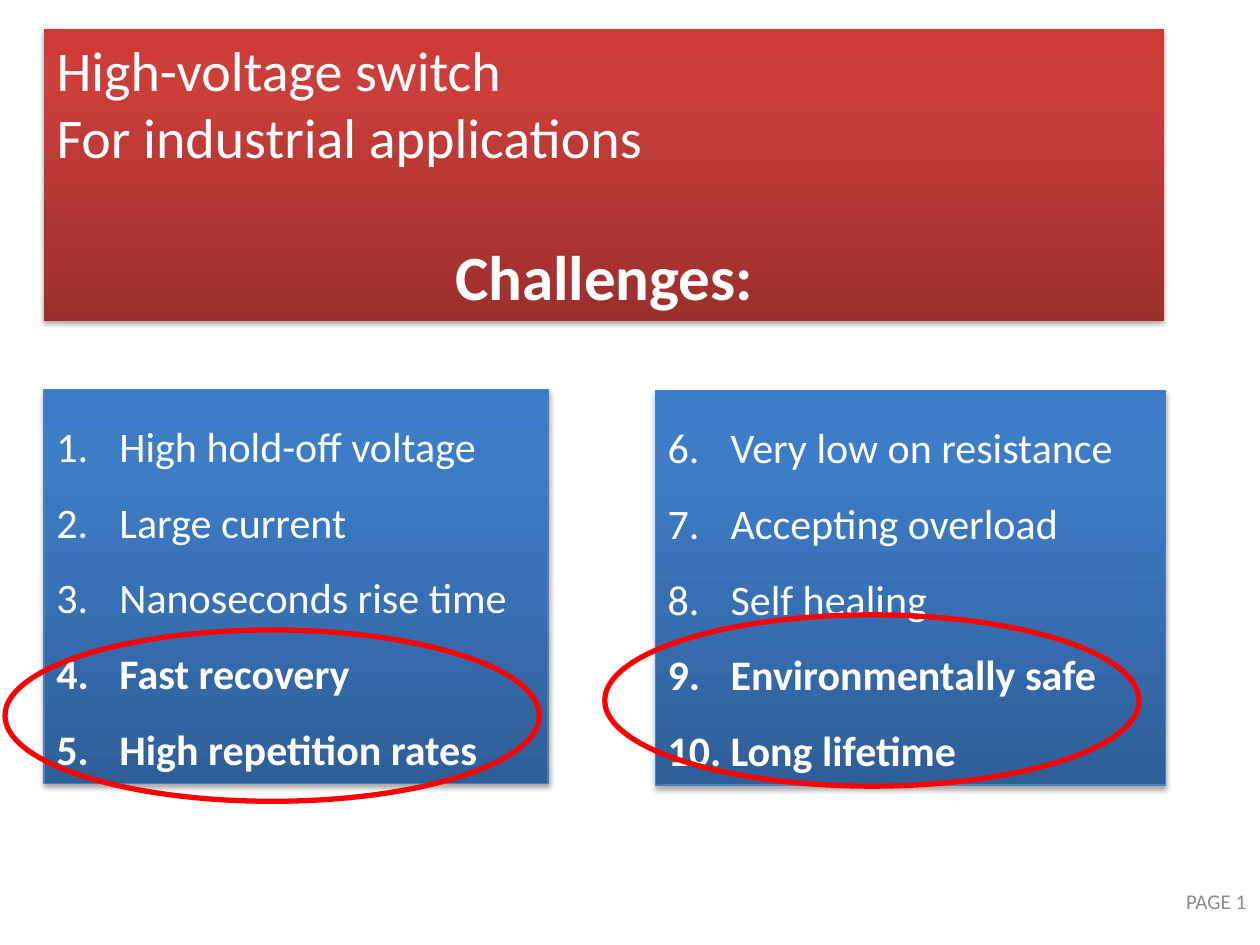
from lxml.etree import SubElement as Sub
from pptx import Presentation
from pptx.dml.color import RGBColor as Rgb
from pptx.enum.shapes import MSO_SHAPE as Kind
from pptx.enum.text import MSO_ANCHOR as Anchor, MSO_AUTO_SIZE as Auto, PP_ALIGN as Align
from pptx.oxml.ns import qn
from pptx.util import Inches, Pt

HUES = {
    "white": "FFFFFF", "gray": "8C8C8C", "ring": "FF0000", "edge": "4B7EBC", "shade": "000000",
}
FADES = {
    "red": ("9C2F2D", "CB3E3A", "CE3B37"),
    "blue": ("2F5F99", "3D7CC7", "3A7CCB"),
}
STOPS = (0, 80, 100)


def hue(name):
    """Return the named colour."""
    return Rgb.from_string(HUES[name])


def style(para, size, name="white", bold=False):
    """Format every run of a paragraph."""
    for run in para.runs:
        font = run.font
        font.name, font.size, font.bold = "Calibri", Pt(size), bold
        font.color.rgb = hue(name)


def write(frame, lines):
    """Put one line in each paragraph, aligned left."""
    frame.text = "\n".join(lines)
    for para in frame.paragraphs:
        para.alignment = Align.LEFT
    return frame.paragraphs


def add_panel(slide, box, fade):
    """Add a rectangle with a vertical gradient and a soft shadow."""
    panel = slide.shapes.add_shape(Kind.RECTANGLE, *map(Inches, box))
    panel.fill.gradient()
    panel.fill.gradient_angle = 90
    props = panel._element.spPr
    stops = props.find(qn("a:gradFill")).find(qn("a:gsLst"))
    for stop in list(stops):
        stops.remove(stop)
    for place, tone in zip(STOPS, FADES[fade]):
        stop = Sub(stops, qn("a:gs"), pos=str(place * 1000))
        Sub(stop, qn("a:srgbClr"), val=tone)
    panel.line.fill.background()
    panel.shadow.inherit = False
    cast = Sub(props.find(qn("a:effectLst")), qn("a:outerShdw"), blurRad=str(Pt(3.1)),
               dist=str(Pt(1.8)), dir="5400000", rotWithShape="0")
    tone = Sub(cast, qn("a:srgbClr"), val=HUES["shade"])
    Sub(tone, qn("a:alpha"), val="35000")
    frame = panel.text_frame
    frame.word_wrap = True
    frame.vertical_anchor = Anchor.TOP
    frame.auto_size = Auto.SHAPE_TO_FIT_TEXT
    return panel


def add_title(slide, box, lines, head):
    """Add the red banner with its lines and a centred heading."""
    panel = add_panel(slide, box, "red")
    *paras, last = write(panel.text_frame, [*lines, head])
    for para in paras:
        style(para, 32)
    last.alignment = Align.CENTER
    last.space_before = Pt(39)
    style(last, 36, bold=True)


def add_list(slide, box, items, start, bold):
    """Add a blue panel of numbered items, the last few in bold."""
    panel = add_panel(slide, box, "blue")
    panel.line.color.rgb = hue("edge")
    panel.line.width = Pt(0.75)
    for spot, para in enumerate(write(panel.text_frame, items)):
        para.line_spacing = 1.5
        props = para._p.get_or_add_pPr()
        props.set("marL", str(Inches(0.5)))
        props.set("indent", str(Inches(-0.5)))
        Sub(props, qn("a:buFont"), typeface="+mj-lt")
        Sub(props, qn("a:buAutoNum"), type="arabicPeriod", startAt=str(start))
        style(para, 24, bold=spot >= len(items) - bold)


def add_ring(slide, box):
    """Add a hollow red ellipse."""
    ring = slide.shapes.add_shape(Kind.OVAL, *map(Inches, box))
    ring.shadow.inherit = False
    ring.fill.background()
    ring.line.color.rgb = hue("ring")
    ring.line.width = Pt(3)


def add_foot(slide, box, text):
    """Add the page label."""
    frame = slide.shapes.add_textbox(*map(Inches, box)).text_frame
    frame.word_wrap = True
    frame.vertical_anchor = Anchor.MIDDLE
    para = write(frame, [text])[0]
    para.alignment = Align.RIGHT
    style(para, 12, "gray")


def main():
    """Build the slide and save it."""
    deck = Presentation()
    deck.slide_width, deck.slide_height = Inches(10), Inches(7.5)
    slide = deck.slides.add_slide(deck.slide_layouts[6])
    add_foot(slide, (7.66, 6.95, 2.33, 0.4), "PAGE 1")
    add_title(slide, (0.35, 0.23, 8.89, 2.32),
              ["High-voltage switch", "For industrial applications"], "Challenges:")
    add_list(slide, (0.35, 3.09, 4, 3.13),
             ["High hold-off voltage", "Large current", "Nanoseconds rise time",
              "Fast recovery", "High repetition rates"], 1, 2)
    add_list(slide, (5.2, 3.1, 4.05, 3.13),
             ["Very low on resistance", "Accepting overload", "Self healing",
              "Environmentally safe", "Long lifetime"], 6, 2)
    for left, top in ((0.04, 5), (4.8, 4.88)):
        add_ring(slide, (left, top, 4.24, 1.36))
    deck.save("out.pptx")


if __name__ == "__main__":
    main()
